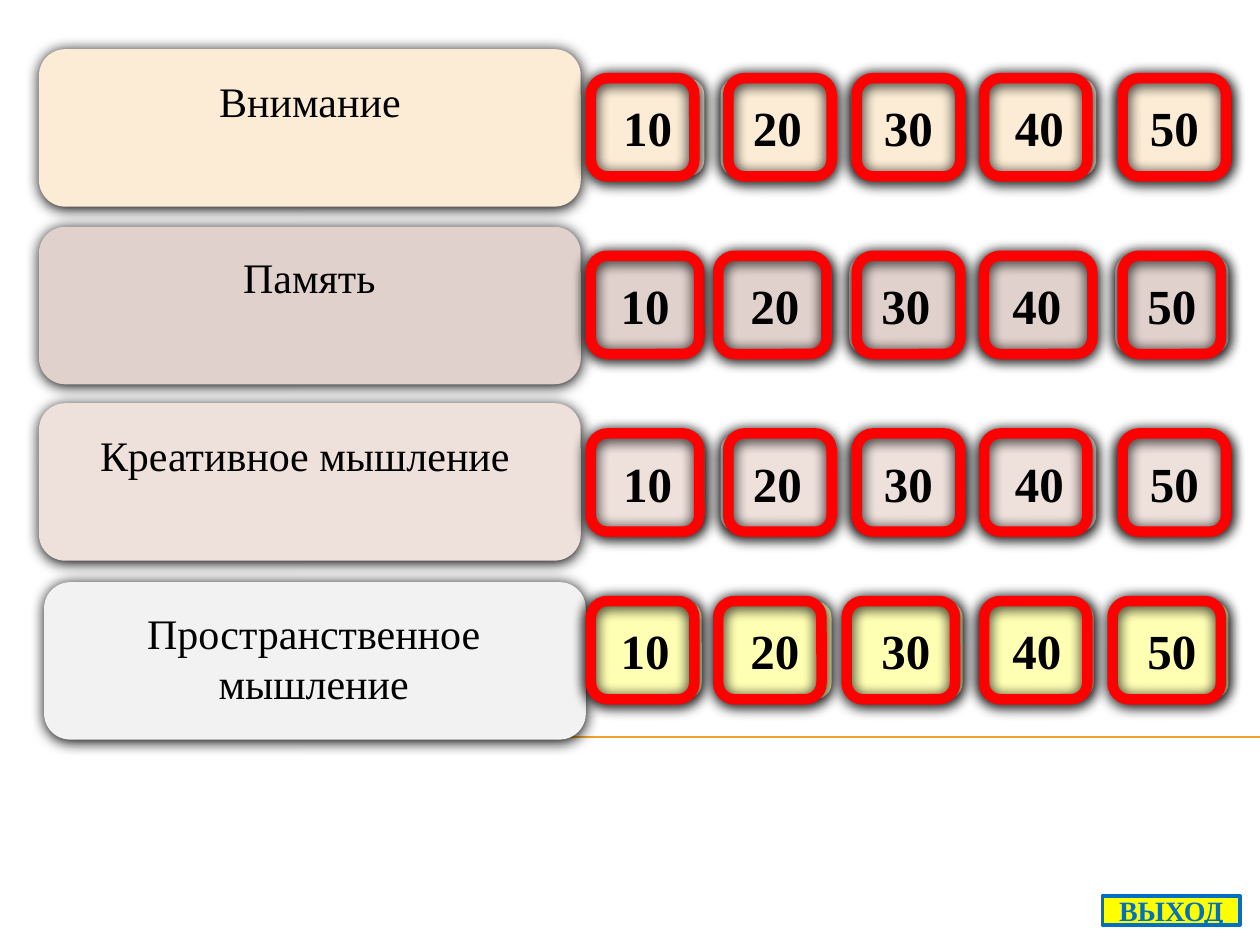
from dataclasses import dataclass

from lxml.etree import SubElement
from pptx import Presentation
from pptx.dml.color import RGBColor
from pptx.enum.shapes import MSO_CONNECTOR, MSO_SHAPE
from pptx.enum.text import MSO_ANCHOR, PP_ALIGN
from pptx.oxml.ns import qn
from pptx.util import Pt

PX = 9144


@dataclass(frozen=True)
class Theme:
    """Colours, type sizes and line widths of the board."""
    font: str = "Times New Roman"
    text: str = "000000"
    frame: str = "FF0000"
    rule: str = "F0A22E"
    button: str = "FFFF00"
    accent: str = "0070C0"
    shadow: str = "000000"
    label_size: int = 24
    score_size: int = 28
    button_size: int = 16
    frame_width: float = 6
    button_width: float = 2
    rule_width: float = 0.75


THEME = Theme()
SCORES = (10, 20, 30, 40, 50)
TILE_OFFSETS = (0, 103, 207, 311, 418)
TILE_W, TILE_H = 90, 78
CARD_W, CARD_H = 430, 125

ROWS = (
    {"label": "Внимание", "card": (31, 39), "text": (8, 16, 414, 50),
     "fills": ("FCECD5", "FCECD5"), "tiles": (469, 62),
     "frames": ((469, 82), (578, 82), (680, 82), (781, 82), (891, 82))},
    {"label": "Память", "card": (31, 180), "text": (31, 15, 367, 50),
     "fills": ("E1D1CC", "E1D1CC"), "tiles": (467, 203),
     "frames": ((469, 86), (570, 86), (680, 82), (781, 86), (891, 78))},
    {"label": "Креативное мышление", "card": (31, 320), "text": (0, 16, 422, 50),
     "fills": ("EEE0DB", "EEE0DB"), "tiles": (469, 344),
     "frames": ((469, 86), (578, 82), (680, 82), (781, 82), (891, 82))},
    {"label": "Пространственное мышление", "card": (35, 462), "text": (8, 15, 412, 91),
     "fills": ("F2F2F2", "FFFFB3"), "tiles": (467, 477),
     "frames": ((469, 82), (570, 82), (672, 86), (781, 82), (883, 86))},
)


def emu(box):
    """Turn px lengths into EMU."""
    return [n * PX for n in box]


def rgb(value):
    """Return the colour for a hex string."""
    return RGBColor.from_string(value)


def write(sp, text, size, color, bold=False, anchor=MSO_ANCHOR.MIDDLE):
    """Put one centred paragraph into a shape."""
    tf = sp.text_frame
    tf.word_wrap = True
    tf.vertical_anchor = anchor
    p = tf.paragraphs[0]
    p.alignment = PP_ALIGN.CENTER
    r = p.add_run()
    r.text = text
    for name, value in {"name": THEME.font, "size": Pt(size), "bold": bold}.items():
        setattr(r.font, name, value)
    r.font.color.rgb = rgb(color)


def add_box(shapes, box, fill=None, line=None, width=0, shadow=True,
            kind=MSO_SHAPE.FLOWCHART_ALTERNATE_PROCESS):
    """Add a preset shape with optional fill, outline and shadow."""
    sp = shapes.add_shape(kind, *emu(box))
    if fill:
        sp.fill.solid()
        sp.fill.fore_color.rgb = rgb(fill)
    else:
        sp.fill.background()
    if line:
        sp.line.color.rgb = rgb(line)
        sp.line.width = Pt(width)
    else:
        sp.line.fill.background()
    sp.shadow.inherit = False
    if shadow:
        effects = sp._element.spPr.find(qn("a:effectLst"))
        outer = SubElement(effects, qn("a:outerShdw"), blurRad=str(Pt(8.5)),
                           dist=str(Pt(1)), dir="5400000", algn="t", rotWithShape="0")
        SubElement(outer, qn("a:srgbClr"), val=THEME.shadow)
    return sp


def add_card(shapes, box, label, text_box, fill):
    """Add a category card grouped with its label."""
    x, y, w, h = box
    dx, dy, tw, th = text_box
    group = shapes.add_group_shape().shapes
    add_box(group, box, fill)
    tb = group.add_textbox(*emu((x + dx, y + dy, tw, th)))
    write(tb, label, THEME.label_size, THEME.text, anchor=MSO_ANCHOR.TOP)


def add_tiles(shapes, origin, fill):
    """Add a row of score tiles."""
    x, y = origin
    for score, dx in zip(SCORES, TILE_OFFSETS):
        sp = add_box(shapes, (x + dx, y, TILE_W, TILE_H), fill)
        write(sp, str(score), THEME.score_size, THEME.text, bold=True)


def add_frames(shapes, y, frames):
    """Add the outlines over a row of tiles."""
    for x, w in frames:
        add_box(shapes, (x, y, w, TILE_H), line=THEME.frame, width=THEME.frame_width)


def add_rule(shapes, box):
    """Add the thin horizontal rule."""
    x, y, w, h = box
    cn = shapes.add_connector(MSO_CONNECTOR.STRAIGHT, *emu((x, y, x + w, y + h)))
    cn.line.color.rgb = rgb(THEME.rule)
    cn.line.width = Pt(THEME.rule_width)
    SubElement(cn._element.spPr, qn("a:effectLst"))


def add_exit(shapes, box):
    """Add the exit button."""
    sp = add_box(shapes, box, THEME.button, THEME.accent, THEME.button_width,
                 shadow=False, kind=MSO_SHAPE.ACTION_BUTTON_CUSTOM)
    write(sp, "ВЫХОД", THEME.button_size, THEME.accent, bold=True)


def main():
    """Build the score board slide."""
    prs = Presentation()
    prs.slide_width, prs.slide_height = emu((1000, 750))
    s = prs.slides.add_slide(prs.slide_layouts[6])
    add_rule(s.shapes, (56, 585, 944, 0))
    for row in ROWS:
        add_card(s.shapes, (*row["card"], CARD_W, CARD_H), row["label"],
                 row["text"], row["fills"][0])
    for row in ROWS:
        add_tiles(s.shapes, row["tiles"], row["fills"][1])
    for row in ROWS:
        add_frames(s.shapes, row["tiles"][1], row["frames"])
    add_exit(s.shapes, (875, 711, 109, 23))
    prs.save("out.pptx")


if __name__ == "__main__":
    main()
